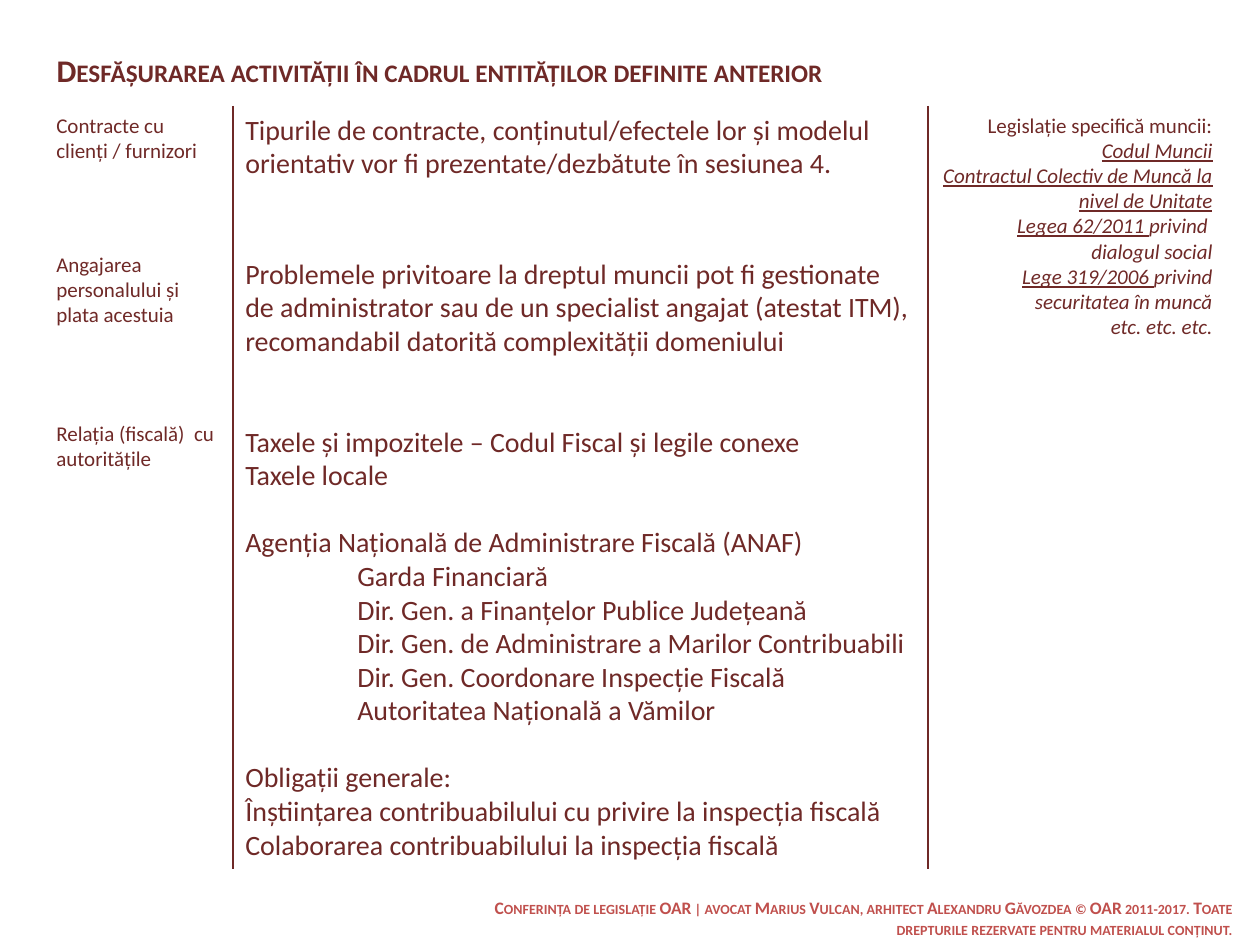
import pptx
import pptx.util
import pptx.dml.color
import pptx.enum.shapes
import pptx.enum.text
import pptx.oxml.ns
import lxml.etree

PX = 914400 / 126
COLORS = {"text": "6F2927", "footer": "C0504D"}
ALIGN = pptx.enum.text.PP_ALIGN
ANCHOR = pptx.enum.text.MSO_ANCHOR


def px(n):
    return pptx.util.Emu(round(n * PX))


def style(tf, size, color="text", align=ALIGN.LEFT, anchor=ANCHOR.TOP, small_caps=False):
    tf.word_wrap = True
    tf.auto_size = pptx.enum.text.MSO_AUTO_SIZE.NONE
    tf.vertical_anchor = anchor
    for p in tf.paragraphs:
        p.alignment = align
        for r in p.runs:
            r.font.name = "Calibri"
            r.font.size = pptx.util.Pt(size)
            r.font.color.rgb = pptx.dml.color.RGBColor.from_string(COLORS[color])
            if small_caps:
                r.font.bold = True
                r.font.element.set("cap", "small") if hasattr(r.font, "element") else r._r.get_or_add_rPr().set("cap", "small")


prs = pptx.Presentation()
prs.slide_width, prs.slide_height = px(1260), px(945)
s = prs.slides.add_slide(prs.slide_layouts[5])

# Title
title = s.shapes.title
title.left, title.top, title.width, title.height = px(44), px(45), px(1153), px(49)
title.text_frame.text = "Desfășurarea activității în cadrul entităților definite anterior"
style(title.text_frame, 18, small_caps=True)

# Column dividers
for x in (233, 928):
    line = s.shapes.add_connector(pptx.enum.shapes.MSO_CONNECTOR.STRAIGHT,
                                  px(x), px(106), px(x), px(869))
    line.line.color.rgb = pptx.dml.color.RGBColor.from_string(COLORS["text"])
    line.line.width = pptx.util.Pt(1.25)
    lxml.etree.SubElement(line._element.spPr, pptx.oxml.ns.qn("a:effectLst"))

# Topic labels and short explanations: left, top, width, height, size, text
blocks = [
    (44, 106, 189, 49, 12, "Contracte cu clienți / furnizori"),
    (44, 245, 189, 49, 12, "Angajarea personalului și plata acestuia"),
    (44, 414, 189, 49, 12, "Relația (fiscală)  cu autoritățile"),
    (233, 106, 695, 90, 16, "Tipurile de contracte, conținutul/efectele lor și modelul "
     "orientativ vor fi prezentate/dezbătute în sesiunea 4."),
    (233, 250, 695, 95, 16, "Problemele privitoare la dreptul muncii pot fi gestionate de "
     "administrator sau de un specialist angajat (atestat ITM), recomandabil datorită "
     "complexității domeniului"),
]
for x, y, w, h, size, text in blocks:
    tf = s.shapes.add_textbox(px(x), px(y), px(w), px(h)).text_frame
    tf.text = text
    style(tf, size)

# Tax authorities: groups separated by one line, agencies indented
groups = [
    (["Taxele și impozitele – Codul Fiscal și legile conexe", "Taxele locale"], []),
    (["Agenția Națională de Administrare Fiscală (ANAF)"],
     ["Garda Financiară",
      "Dir. Gen. a Finanțelor Publice Județeană",
      "Dir. Gen. de Administrare a Marilor Contribuabili",
      "Dir. Gen. Coordonare Inspecție Fiscală",
      "Autoritatea Națională a Vămilor"]),
    (["Obligații generale:",
      "Înștiințarea contribuabilului cu privire la inspecția fiscală",
      "Colaborarea contribuabilului la inspecția fiscală"], []),
]
tf = s.shapes.add_textbox(px(233), px(418), px(695), px(450)).text_frame
tf.text = "\n".join(t for main, sub in groups for t in main + sub)
style(tf, 16)
paragraphs = iter(tf.paragraphs)
for g, (main, sub) in enumerate(groups):
    for i in range(len(main) + len(sub)):
        p = next(paragraphs)
        if g and i == 0:
            p.space_before = pptx.util.Pt(19.2)
        if i >= len(main):
            p._p.get_or_add_pPr().set("marL", str(px(112)))

# Labour legislation: (underlined part, plain part) per paragraph
laws = [
    ("", "Legislație specifică muncii:"),
    ("Codul Muncii", ""),
    ("Contractul Colectiv de Muncă la nivel de Unitate", ""),
    ("Legea 62/2011 ", "privind \vdialogul social"),
    ("Lege 319/2006 ", "privind securitatea în muncă"),
    ("", "etc. etc. etc."),
]
tf = s.shapes.add_textbox(px(928), px(106), px(297), px(377)).text_frame
for i, (law, plain) in enumerate(laws):
    p = tf.add_paragraph() if i else tf.paragraphs[0]
    if law:
        r = p.add_run()
        r.text = law
        r.font.underline = True
    for j, part in enumerate(plain.split("\v") if plain else []):
        if j:
            p.add_line_break()
        r = p.add_run()
        r.text = part
    for r in p.runs:
        r.font.italic = i > 0
style(tf, 12, align=ALIGN.RIGHT)

# Footer
tf = s.shapes.add_textbox(px(481), px(906), px(764), px(24)).text_frame
tf.text = ("Conferința de legislație OAR | avocat Marius Vulcan, arhitect Alexandru Găvozdea "
           "© OAR 2011-2017. Toate drepturile rezervate pentru materialul conținut.")
style(tf, 10, "footer", ALIGN.RIGHT, ANCHOR.MIDDLE, small_caps=True)

prs.save("out.pptx")
